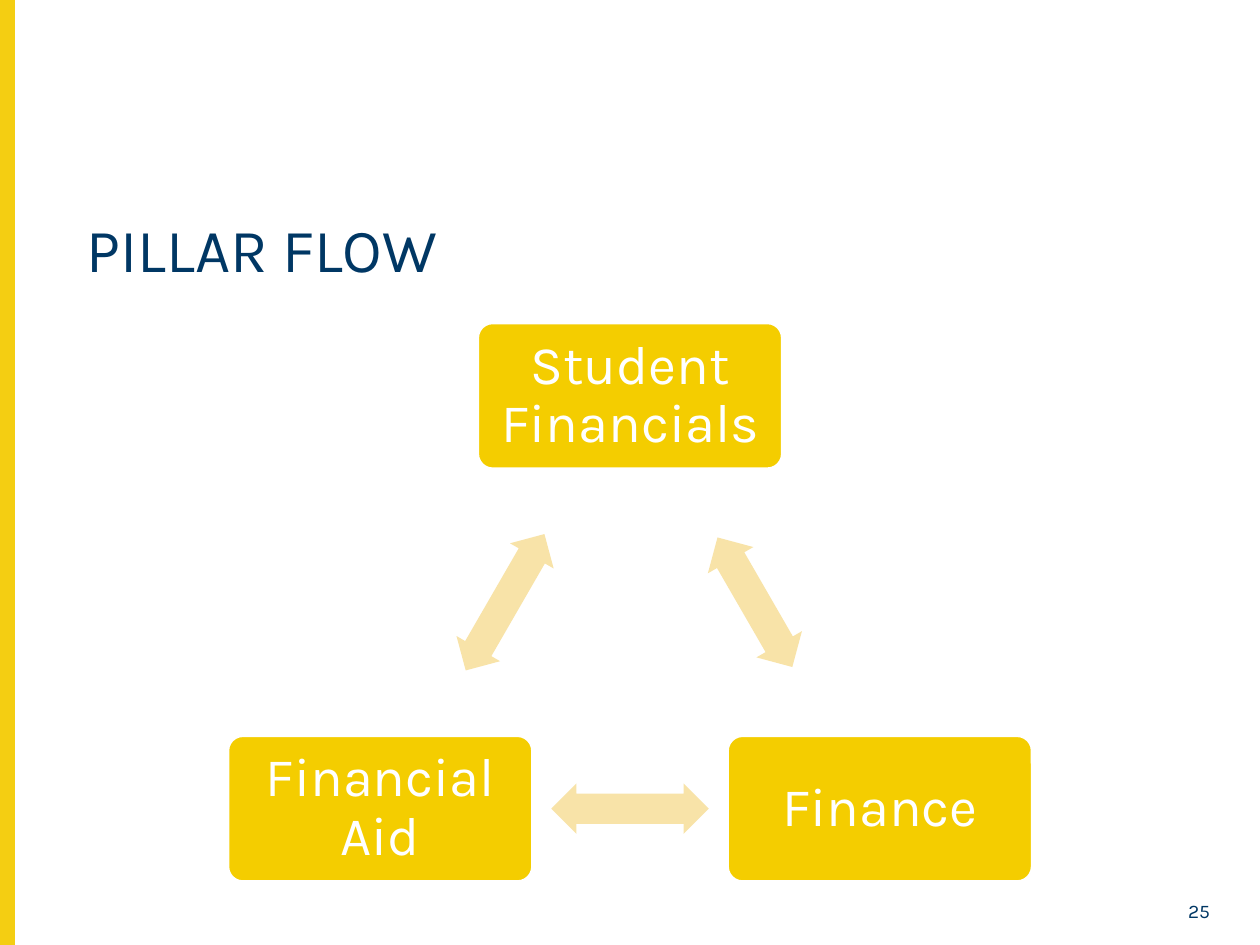
from pptx import Presentation
from pptx.dml.color import RGBColor
from pptx.enum.shapes import MSO_SHAPE
from pptx.enum.text import MSO_ANCHOR, PP_ALIGN
from pptx.util import Pt

RECT, ROUNDED = MSO_SHAPE.RECTANGLE, MSO_SHAPE.ROUNDED_RECTANGLE
DOUBLE_ARROW = MSO_SHAPE.LEFT_RIGHT_ARROW
LEFT, CENTER, RIGHT = PP_ALIGN.LEFT, PP_ALIGN.CENTER, PP_ALIGN.RIGHT
TOP, MIDDLE = MSO_ANCHOR.TOP, MSO_ANCHOR.MIDDLE

COLORS = {"band": "F4CE12", "pillar": "F4CD00", "arrow": "F8E3A8",
          "navy": "003764", "white": "FFFFFF"}
FONT = "Karla"
PILLAR_W, PILLAR_H = 173.5, 82.8


def color(name):
    return RGBColor.from_string(COLORS[name])


def add_block(slide, preset, box, fill, outline=None, adjustments=()):
    block = slide.shapes.add_shape(preset, *map(Pt, box))
    block.shadow.inherit = False
    block.fill.solid()
    block.fill.fore_color.rgb = color(fill)
    if outline:
        block.line.color.rgb = color(outline)
        block.line.width = Pt(1)
    else:
        block.line.fill.background()
    for index, value in enumerate(adjustments):
        block.adjustments[index] = value
    return block


def write(holder, text, size, ink, align=LEFT, anchor=TOP, spacing=1.0, insets=(7.2, 3.6)):
    frame = holder.text_frame
    side, end = map(Pt, insets)
    layout = {"word_wrap": True, "vertical_anchor": anchor, "margin_left": side,
              "margin_right": side, "margin_top": end, "margin_bottom": end}
    for key, value in layout.items():
        setattr(frame, key, value)
    paragraph = frame.paragraphs[0]
    paragraph.alignment, paragraph.line_spacing = align, spacing
    run = paragraph.add_run()
    run.text = text
    for key, value in {"name": FONT, "size": Pt(size)}.items():
        setattr(run.font, key, value)
    run.font.color.rgb = color(ink)


def add_label(slide, box, text, size, **style):
    write(slide.shapes.add_textbox(*map(Pt, box)), text, size, "navy", **style)


def add_pillar_flow(slide, box):
    """Three pillars at the corners of a triangle, with a double arrow on each side."""
    left, top, width, height = box
    center_x = left + width / 2
    upper_y = top + PILLAR_H / 2
    lower_y = top + height - PILLAR_H / 2
    corners = [("Student Financials", center_x, upper_y),
               ("Finance", left + width - PILLAR_W / 2, lower_y),
               ("Financial Aid", left + PILLAR_W / 2, lower_y)]
    sides = [(60, 85.5, 30), (180, 90, 28.8), (300, 90, 28.8)]

    for index, (name, x, y) in enumerate(corners):
        pillar = add_block(slide, ROUNDED,
                           (x - PILLAR_W / 2, y - PILLAR_H / 2, PILLAR_W, PILLAR_H),
                           "pillar", "white", [0.1])
        write(pillar, name, 31, "white", CENTER, MIDDLE, 0.9, (6, 6))

        _, next_x, next_y = corners[(index + 1) % len(corners)]
        angle, length, breadth = sides[index]
        arrow = add_block(slide, DOUBLE_ARROW,
                          ((x + next_x - length) / 2, (y + next_y - breadth) / 2,
                           length, breadth),
                          "arrow", adjustments=[0.6, 0.5])
        arrow.rotation = angle


def main():
    deck = Presentation()
    deck.slide_width, deck.slide_height = Pt(720), Pt(540)
    slide = deck.slides.add_slide(deck.slide_layouts[6])
    add_block(slide, RECT, (0, 0, 8, 540), "band", "band")
    add_label(slide, (42.5, 122, 656.6, 62.6), "PILLAR FLOW", 35, spacing=0.9)
    add_label(slide, (661.9, 510.5, 36.7, 18.7), "25", 11, align=RIGHT)
    add_pillar_flow(slide, (130.5, 184.8, 459, 318.7))
    deck.save("out.pptx")


if __name__ == "__main__":
    main()
